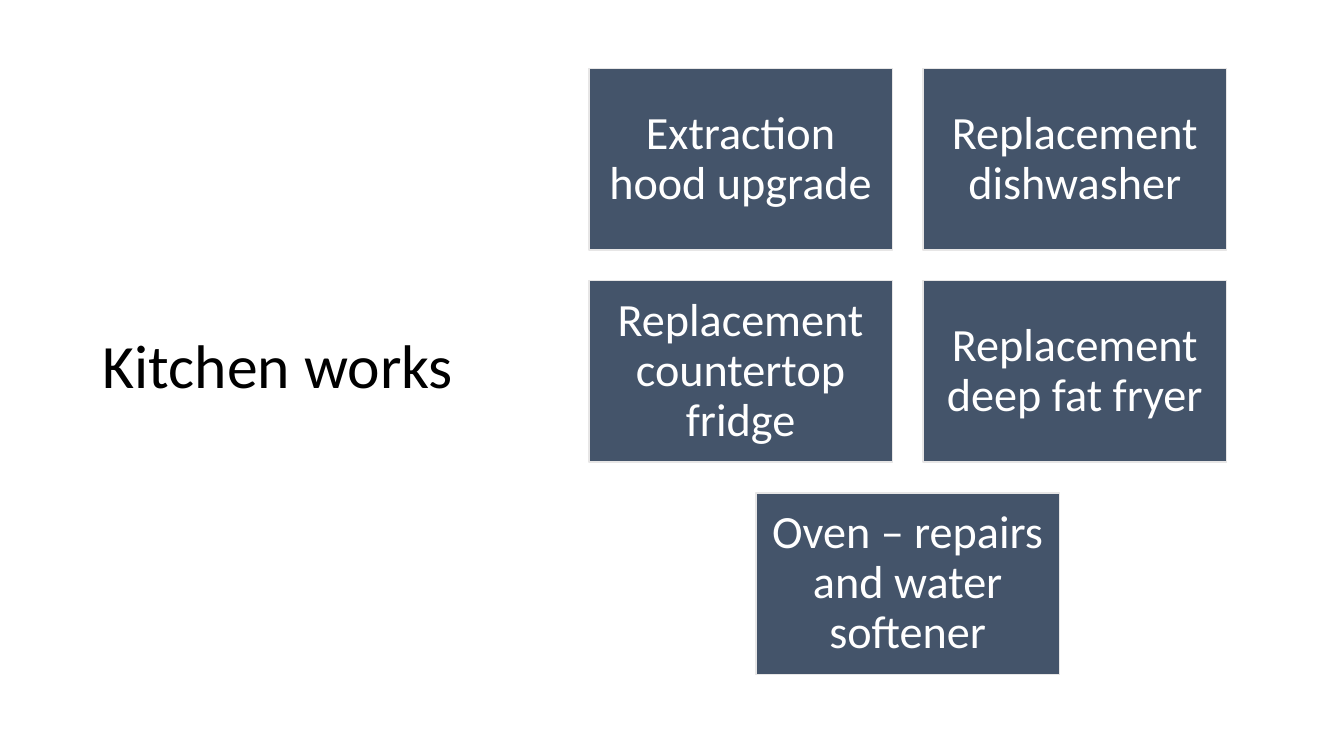
import dataclasses

import pptx
import pptx.dml.color
import pptx.enum.shapes
import pptx.enum.text
import pptx.slide
import pptx.text.text
import pptx.util

SLATE = pptx.dml.color.RGBColor(0x44, 0x54, 0x6A)
PALE_GREY = pptx.dml.color.RGBColor(0xE7, 0xE6, 0xE6)
WHITE = pptx.dml.color.RGBColor(0xFF, 0xFF, 0xFF)
BLACK = pptx.dml.color.RGBColor(0x00, 0x00, 0x00)

Inches = pptx.util.Inches
GRID_LEFT, GRID_TOP = 5.84, 0.68
TILE_WIDTH, TILE_HEIGHT, GAP = 3.01, 1.8, 0.305
TILE_INSET = Inches(0.14)


@dataclasses.dataclass(frozen=True)
class Job:
    """A kitchen job and its place, in columns and rows of the grid."""

    label: str
    column: float
    row: int


JOBS = (
    Job("Extraction hood upgrade", 0, 0),
    Job("Replacement dishwasher", 1, 0),
    Job("Replacement countertop fridge", 0, 1),
    Job("Replacement deep fat fryer", 1, 1),
    Job("Oven – repairs and water softener", 0.5, 2),
)


def write(
    frame: pptx.text.text.TextFrame,
    wording: str,
    size: int,
    color: pptx.dml.color.RGBColor,
    alignment: pptx.enum.text.PP_ALIGN,
) -> None:
    """Fill a frame with one vertically centred, wrapped paragraph."""
    frame.text = wording
    frame.word_wrap = True
    frame.auto_size = pptx.enum.text.MSO_AUTO_SIZE.NONE
    frame.vertical_anchor = pptx.enum.text.MSO_ANCHOR.MIDDLE
    paragraph = frame.paragraphs[0]
    paragraph.alignment = alignment
    paragraph.line_spacing = 0.9
    paragraph.font.name = "Calibri"
    paragraph.font.size = pptx.util.Pt(size)
    paragraph.font.color.rgb = color


def add_heading(slide: pptx.slide.Slide) -> None:
    """Place the slide title in the left-hand column."""
    heading = slide.shapes.title
    heading.left, heading.top = Inches(0.92), Inches(0.61)
    heading.width, heading.height = Inches(3.69), Inches(6.09)
    write(heading.text_frame, "Kitchen works", 44, BLACK, pptx.enum.text.PP_ALIGN.LEFT)


def add_job(slide: pptx.slide.Slide, job: Job) -> None:
    """Draw one job as a tile on the grid."""
    tile = slide.shapes.add_shape(
        pptx.enum.shapes.MSO_SHAPE.RECTANGLE,
        Inches(GRID_LEFT + job.column * (TILE_WIDTH + GAP)),
        Inches(GRID_TOP + job.row * (TILE_HEIGHT + GAP)),
        Inches(TILE_WIDTH),
        Inches(TILE_HEIGHT),
    )
    tile.shadow.inherit = False
    tile.fill.solid()
    tile.fill.fore_color.rgb = SLATE
    tile.line.color.rgb = PALE_GREY
    tile.line.width = pptx.util.Pt(1)
    frame = tile.text_frame
    frame.margin_left = frame.margin_right = TILE_INSET
    frame.margin_top = frame.margin_bottom = TILE_INSET
    write(frame, job.label, 33, WHITE, pptx.enum.text.PP_ALIGN.CENTER)


def main() -> None:
    """Build and save the kitchen works slide."""
    deck = pptx.Presentation()
    deck.slide_width, deck.slide_height = Inches(13.33), Inches(7.5)
    slide = deck.slides.add_slide(deck.slide_layouts.get_by_name("Title Only"))
    add_heading(slide)
    for job in JOBS:
        add_job(slide, job)
    deck.save("out.pptx")


if __name__ == "__main__":
    main()
